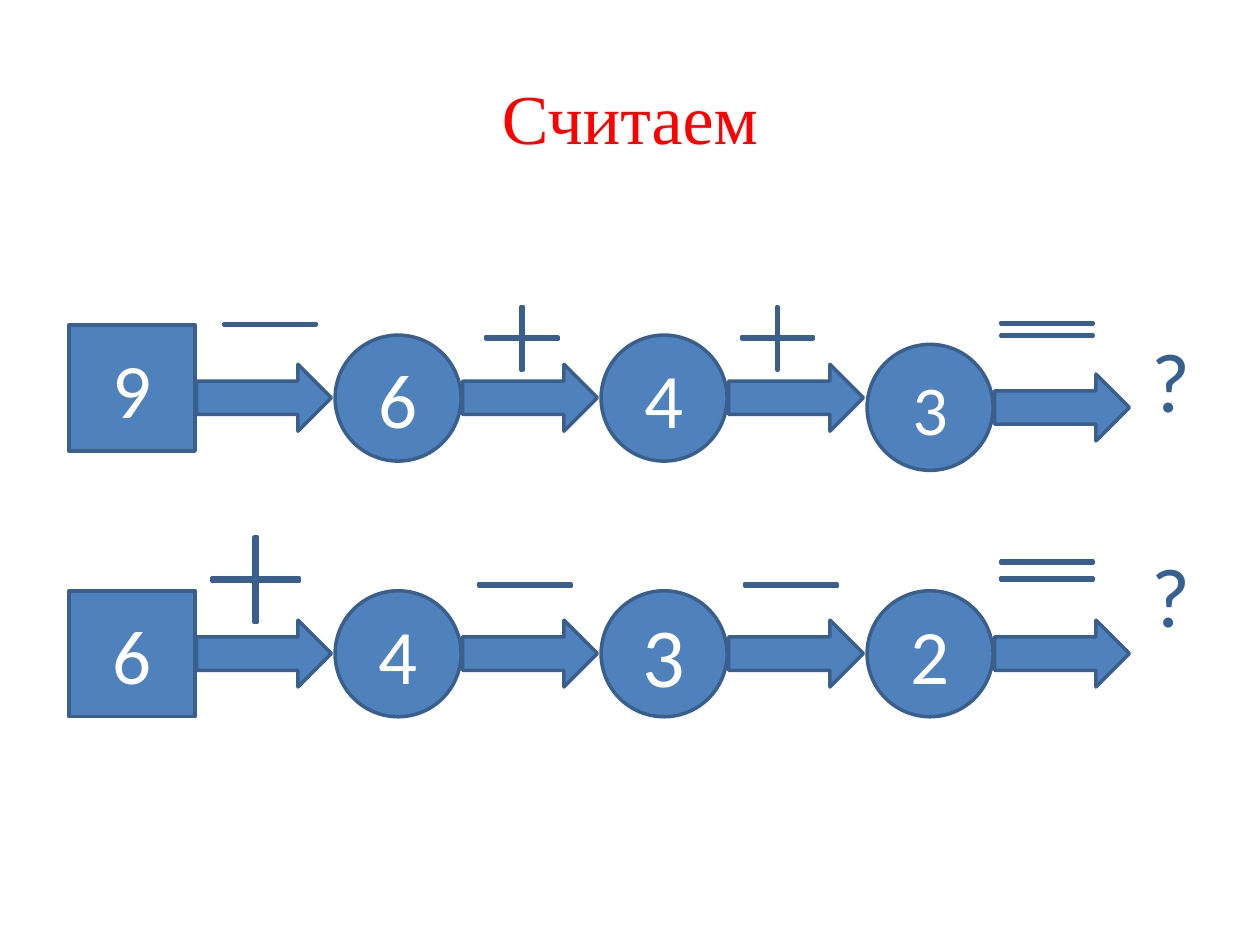
from pptx import Presentation
from pptx.dml.color import RGBColor
from pptx.enum.shapes import MSO_SHAPE
from pptx.enum.text import MSO_ANCHOR, MSO_AUTO_SIZE, PP_ALIGN
from pptx.util import Pt
from lxml import etree

RECT, OVAL, ARROW = MSO_SHAPE.RECTANGLE, MSO_SHAPE.OVAL, MSO_SHAPE.RIGHT_ARROW
PLUS, MINUS, EQUAL = MSO_SHAPE.MATH_PLUS, MSO_SHAPE.MATH_MINUS, MSO_SHAPE.MATH_EQUAL
CENTER, MIDDLE, TOP = PP_ALIGN.CENTER, MSO_ANCHOR.MIDDLE, MSO_ANCHOR.TOP
NO_FIT = MSO_AUTO_SIZE.NONE

COLORS = {"title": "FF0000", "answer": "376092", "fill": "4F81BD",
          "line": "3A5F8C", "digit": "FFFFFF"}
TITLE = "Считаем"
ANSWERS = ["?", "?"]

# digit, size, node top, arrow top
NODES = [
    [("9", 44, 185.8, 208.2), ("6", 44, 191.5, 208.2),
     ("4", 44, 191.5, 208.2), ("3", 40, 196.8, 213.8)],
    [("6", 44, 337.6, 354.4), ("4", 44, 337.6, 354.4),
     ("3", 48, 337.6, 354.4), ("2", 44, 337.6, 354.4)],
]
SIGNS = [
    (MINUS, 118.1, 168.5, 72, 33.8, [0.032]),
    (PLUS, 270, 168.5, 56.2, 49.7, [0.027]),
    (PLUS, 416.2, 168.5, 56.2, 49.7, [0.027]),
    (EQUAL, 562.3, 168.5, 72, 39.6, [0.022, 0.161]),
    (PLUS, 112.3, 298.1, 67.7, 66.2, [0.029]),
    (MINUS, 264.2, 298.1, 72, 72, [0.021]),
    (MINUS, 416.2, 298.1, 72, 72, [0.021]),
    (EQUAL, 562.3, 292.3, 72, 67.7, [0.024, 0.118]),
]
LEFT, STEP, NODE = 39.5, 152, 72
ARROW_GAP, ARROW_W, ARROW_H = 72.9, 77, 38.2


def rgb(name):
    return RGBColor.from_string(COLORS[name])


def place(sp, x, y, w, h):
    sp.left, sp.top, sp.width, sp.height = Pt(x), Pt(y), Pt(w), Pt(h)


def style(p, font, size, color):
    for r in p.runs:
        r.font.name, r.font.size = font, Pt(size)
        r.font.color.rgb = rgb(color)


def add_shape(s, kind, x, y, w, h, adjustments=()):
    sp = s.shapes.add_shape(kind, Pt(x), Pt(y), Pt(w), Pt(h))
    sp.shadow.inherit = False
    sp.fill.solid()
    sp.fill.fore_color.rgb = rgb("fill")
    sp.line.color.rgb = rgb("line")
    sp.line.width = Pt(2)
    for i, value in enumerate(adjustments):
        sp.adjustments[i] = value
    return sp


def add_title(s):
    sp = s.shapes.title
    place(sp, 36, 21.6, 648, 90)
    tf = sp.text_frame
    tf.text = TITLE
    tf.vertical_anchor = MIDDLE
    tf.paragraphs[0].alignment = CENTER
    style(tf.paragraphs[0], "Times New Roman", 40, "title")


def add_answers(s):
    sp = s.placeholders[1]
    place(sp, 36, 126, 661.7, 356.4)
    tf = sp.text_frame
    tf.text = "\n".join(ANSWERS)
    tf.auto_size, tf.vertical_anchor = NO_FIT, TOP
    tf.margin_top = Pt(62)
    for p, space in zip(tf.paragraphs, (0, 65)):
        p.space_before = Pt(space)
        pPr = p._p.get_or_add_pPr()
        pPr.set("marL", str(Pt(615)))
        pPr.set("indent", "0")
        etree.SubElement(pPr, pPr.tag.replace("pPr", "buNone"))
        style(p, "Calibri", 48, "answer")


def add_chain(s, row):
    for i, (digit, size, node_y, arrow_y) in enumerate(row):
        x = LEFT + i * STEP
        sp = add_shape(s, OVAL if i else RECT, x, node_y, NODE, NODE)
        tf = sp.text_frame
        tf.text = digit
        tf.vertical_anchor = MIDDLE
        tf.paragraphs[0].alignment = CENTER
        style(tf.paragraphs[0], "Calibri", size, "digit")
        add_shape(s, ARROW, x + ARROW_GAP, arrow_y, ARROW_W, ARROW_H)


def main():
    prs = Presentation()
    prs.slide_width, prs.slide_height = Pt(720), Pt(540)
    s = prs.slides.add_slide(prs.slide_layouts[1])
    add_title(s)
    add_answers(s)
    for row in NODES:
        add_chain(s, row)
    for sign in SIGNS:
        add_shape(s, *sign)
    prs.save("out.pptx")


if __name__ == "__main__":
    main()
